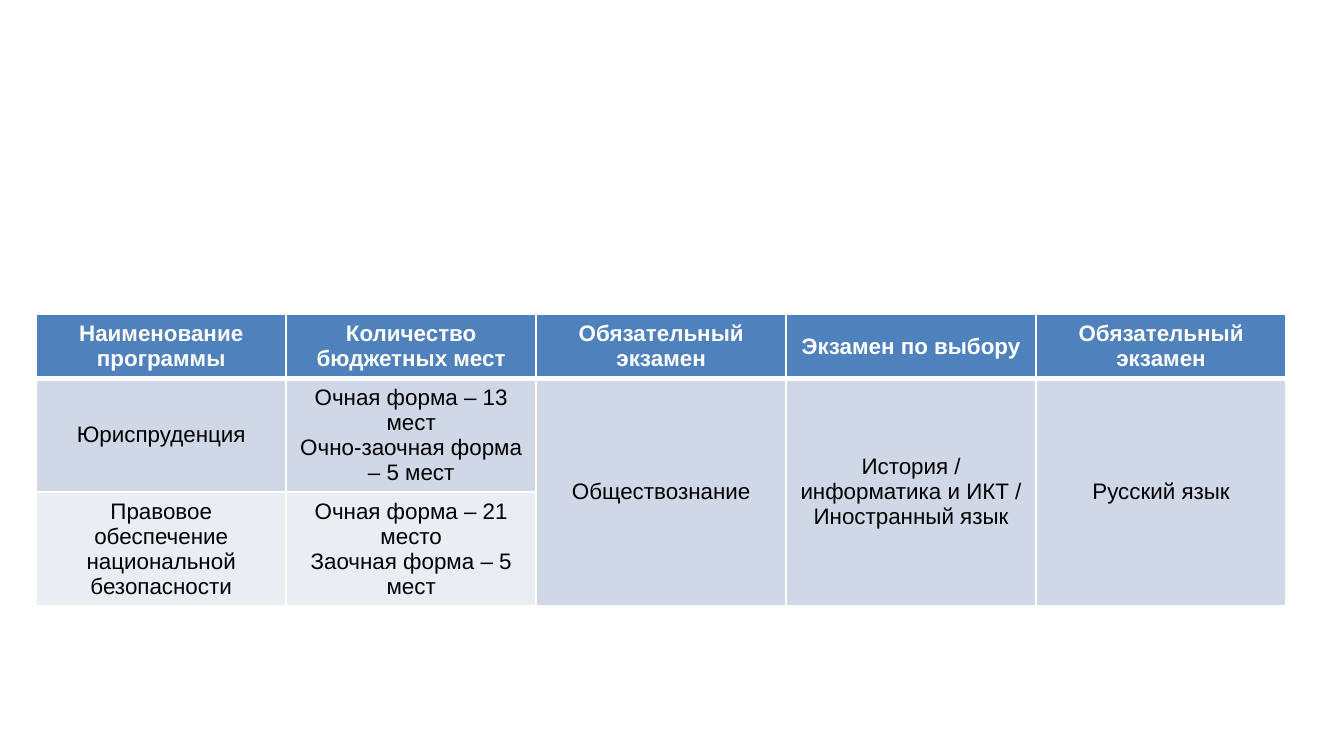
import pptx
import pptx.util
import pptx.dml.color
import pptx.enum.text
import pptx.oxml
import pptx.oxml.ns
from pptx.util import Inches

COLORS = {
    "head": "4F81BD",
    "odd": "D0D8E8",
    "even": "E9EDF4",
    "white": "FFFFFF",
    "black": "000000",
}
HEADS = [
    "Наименование программы",
    "Количество бюджетных мест",
    "Обязательный экзамен",
    "Экзамен по выбору",
    "Обязательный экзамен",
]
# Each cell is a list of paragraphs
ROWS = [
    [[head] for head in HEADS],
    [
        ["Юриспруденция"],
        ["Очная форма – 13 мест", "Очно-заочная форма – 5 мест"],
        ["Обществознание"],
        ["История / информатика и ИКТ / Иностранный язык"],
        ["Русский язык"],
    ],
    [
        ["Правовое обеспечение национальной безопасности"],
        ["Очная форма – 21 место", "Заочная форма – 5 мест"],
    ],
]
FILLS = ["head", "odd", "even"]
HEIGHTS = [0.47, 0.84, 0.84]
WIDTH = 1.86


def rgb(name):
    return pptx.dml.color.RGBColor.from_string(COLORS[name])


def write(frame, lines, size=12, color="black", bold=False):
    for i, line in enumerate(lines):
        para = frame.add_paragraph() if i else frame.paragraphs[0]
        para.alignment = pptx.enum.text.PP_ALIGN.CENTER
        run = para.add_run()
        run.text = line
        run.font.name = "Arial"
        run.font.size = pptx.util.Pt(size)
        run.font.bold = bold
        run.font.color.rgb = rgb(color)


def edge(cell, top=1, bottom=1):
    # Borders come before the fill in the cell properties
    props = cell._tc.get_or_add_tcPr()
    sides = {"L": 1, "R": 1, "T": top, "B": bottom}
    for i, (side, width) in enumerate(sides.items()):
        line = pptx.oxml.parse_xml(
            f'<a:ln{side} {pptx.oxml.ns.nsdecls("a")} w="{pptx.util.Pt(width)}">'
            f'<a:solidFill><a:srgbClr val="{COLORS["white"]}"/></a:solidFill>'
            f"</a:ln{side}>"
        )
        props.insert(i, line)


def add_grid(slide):
    count = len(HEADS)
    frame = slide.shapes.add_table(
        len(ROWS), count, Inches(0.27), Inches(2.34),
        Inches(WIDTH * count), Inches(sum(HEIGHTS)),
    )
    table = frame.table
    for col in table.columns:
        col.width = Inches(WIDTH)
    for row, height in zip(table.rows, HEIGHTS):
        row.height = Inches(height)

    # Exams are shared by both programmes
    for c in range(2, count):
        table.cell(1, c).merge(table.cell(2, c))

    for r, fill in enumerate(FILLS):
        for c in range(count):
            cell = table.cell(r, c)
            cell.vertical_anchor = pptx.enum.text.MSO_ANCHOR.MIDDLE
            cell.fill.solid()
            cell.fill.fore_color.rgb = rgb("odd" if cell.is_spanned else fill)
            edge(cell, top=3 if r == 1 else 1, bottom=3 if r == 0 else 1)
        for c, lines in enumerate(ROWS[r]):
            write(table.cell(r, c).text_frame, lines,
                  color="black" if r else "white", bold=r == 0)


def main():
    deck = pptx.Presentation()
    # Widescreen, 16 to 9
    deck.slide_width = Inches(10)
    deck.slide_height = deck.slide_width * 9 // 16
    slide = deck.slides.add_slide(deck.slide_layouts[6])
    add_grid(slide)
    deck.save("out.pptx")


if __name__ == "__main__":
    main()
